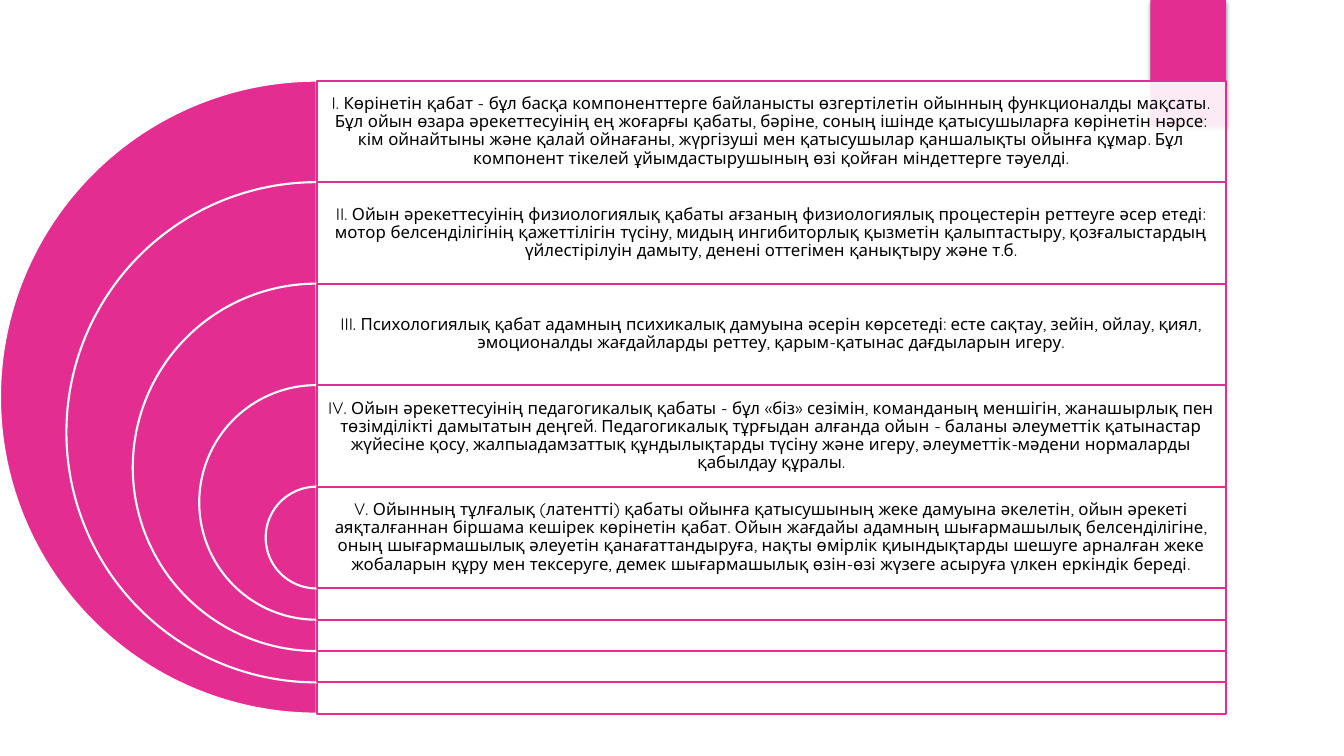
from dataclasses import dataclass

from lxml import etree
from pptx import Presentation
from pptx.dml.color import RGBColor
from pptx.enum.shapes import MSO_SHAPE
from pptx.enum.text import MSO_ANCHOR, PP_ALIGN
from pptx.oxml.ns import qn
from pptx.shapes.autoshape import Shape
from pptx.shapes.shapetree import GroupShapes
from pptx.util import Inches, Pt

PIE = MSO_SHAPE.PIE
RECTANGLE = MSO_SHAPE.RECTANGLE
CENTER = PP_ALIGN.CENTER
MIDDLE = MSO_ANCHOR.MIDDLE

SLIDE_WIDTH, SLIDE_HEIGHT = 13.33, 7.5
PINK, WHITE, BLACK = "E32D91", "FFFFFF", "000000"
FONT = "Quicksand"

TOP = 0.8
OUTER_DIAMETER = 6.28
INNER_DIAMETER = 1.01
PANEL_LEFT = OUTER_DIAMETER / 2
PANEL_WIDTH = 9.02
ROW_HEIGHT = 1.007
INSET = 0.05


@dataclass(frozen=True)
class Box:
    left: float
    top: float
    width: float
    height: float

    def lengths(self) -> tuple[int, int, int, int]:
        return (Inches(self.left), Inches(self.top),
                Inches(self.width), Inches(self.height))


@dataclass(frozen=True)
class Layer:
    row: int
    text: str

    @property
    def top(self) -> float:
        return TOP + self.row * ROW_HEIGHT

    @property
    def diameter(self) -> float:
        step = (OUTER_DIAMETER - INNER_DIAMETER) / (len(TEXTS) - 1)
        return OUTER_DIAMETER - self.row * step


TEXTS = [
    "I. Көрінетін қабат - бұл басқа компоненттерге байланысты өзгертілетін "
    "ойынның функционалды мақсаты. Бұл ойын өзара әрекеттесуінің ең жоғарғы "
    "қабаты, бәріне, соның ішінде қатысушыларға көрінетін нәрсе: кім ойнайтыны "
    "және қалай ойнағаны, жүргізуші мен қатысушылар қаншалықты ойынға құмар. "
    "Бұл компонент тікелей ұйымдастырушының өзі қойған міндеттерге тәуелді.",
    "II. Ойын әрекеттесуінің физиологиялық қабаты ағзаның физиологиялық "
    "процестерін реттеуге әсер етеді: мотор белсенділігінің қажеттілігін түсіну, "
    "мидың ингибиторлық қызметін қалыптастыру, қозғалыстардың үйлестірілуін "
    "дамыту, денені оттегімен қанықтыру және т.б.",
    "III. Психологиялық қабат адамның психикалық дамуына әсерін көрсетеді: есте "
    "сақтау, зейін, ойлау, қиял, эмоционалды жағдайларды реттеу, қарым-қатынас "
    "дағдыларын игеру.",
    "IV. Ойын әрекеттесуінің педагогикалық қабаты - бұл «біз» сезімін, команданың "
    "меншігін, жанашырлық пен төзімділікті дамытатын деңгей. Педагогикалық "
    "тұрғыдан алғанда ойын - баланы әлеуметтік қатынастар жүйесіне қосу, "
    "жалпыадамзаттық құндылықтарды түсіну және игеру, әлеуметтік-мәдени "
    "нормаларды қабылдау құралы.",
    "V. Ойынның тұлғалық (латентті) қабаты ойынға қатысушының жеке дамуына "
    "әкелетін, ойын әрекеті аяқталғаннан біршама кешірек көрінетін қабат. Ойын "
    "жағдайы адамның шығармашылық белсенділігіне, оның шығармашылық әлеуетін "
    "қанағаттандыруға, нақты өмірлік қиындықтарды шешуге арналған жеке жобаларын "
    "құру мен тексеруге, демек шығармашылық өзін-өзі жүзеге асыруға үлкен "
    "еркіндік береді.",
]


def color(value: str) -> RGBColor:
    return RGBColor.from_string(value)


def add_alpha(element: etree._Element, percent: int) -> None:
    etree.SubElement(element, qn("a:alpha")).set("val", str(percent * 1000))


def add_block(shapes: GroupShapes, kind: MSO_SHAPE, box: Box, fill: str,
              line: str | None = None) -> Shape:
    shape = shapes.add_shape(kind, *box.lengths())
    shape.shadow.inherit = False
    shape.fill.solid()
    shape.fill.fore_color.rgb = color(fill)
    if line is None:
        shape.line.fill.background()
    else:
        shape.line.color.rgb = color(line)
        shape.line.width = Pt(1.5)
    return shape


def add_ribbon(shapes: GroupShapes) -> None:
    ribbon = add_block(shapes, RECTANGLE, Box(11.41, 0, 0.75, SLIDE_HEIGHT / 6), PINK)
    effects = ribbon._element.spPr.find(qn("a:effectLst"))
    shadow = etree.SubElement(effects, qn("a:outerShdw"))
    shadow.set("blurRad", str(Pt(3)))
    shadow.set("dist", str(Pt(2)))
    shadow.set("dir", str(90 * 60000))
    shadow.set("rotWithShape", "0")
    shadow_color = etree.SubElement(shadow, qn("a:srgbClr"))
    shadow_color.set("val", BLACK)
    add_alpha(shadow_color, 45)


def add_layer(shapes: GroupShapes, layer: Layer) -> None:
    diameter = layer.diameter
    pie = add_block(shapes, PIE,
                    Box(PANEL_LEFT - diameter / 2, layer.top, diameter, diameter),
                    PINK, WHITE)
    pie.adjustments[0] = 54
    pie.adjustments[1] = 162

    panel = add_block(shapes, RECTANGLE,
                      Box(PANEL_LEFT, layer.top, PANEL_WIDTH, diameter), WHITE, PINK)
    add_alpha(panel._element.spPr.find(qn("a:solidFill"))[0], 90)

    label = shapes.add_textbox(
        *Box(PANEL_LEFT, layer.top, PANEL_WIDTH, ROW_HEIGHT).lengths())
    frame = label.text_frame
    frame.word_wrap = True
    frame.vertical_anchor = MIDDLE
    frame.margin_left = frame.margin_right = Inches(INSET)
    frame.margin_top = frame.margin_bottom = Inches(INSET)
    paragraph = frame.paragraphs[0]
    paragraph.text = layer.text
    paragraph.alignment = CENTER
    paragraph.line_spacing = 0.9
    paragraph.font.name = FONT
    paragraph.font.size = Pt(12)
    paragraph.font.color.rgb = color(BLACK)


def main() -> None:
    presentation = Presentation()
    presentation.slide_width = Inches(SLIDE_WIDTH)
    presentation.slide_height = Inches(SLIDE_HEIGHT)
    slide = presentation.slides.add_slide(presentation.slide_layouts[6])
    add_ribbon(slide.shapes)
    diagram = slide.shapes.add_group_shape()
    for row, text in enumerate(TEXTS):
        add_layer(diagram.shapes, Layer(row, text))
    presentation.save("out.pptx")


if __name__ == "__main__":
    main()
